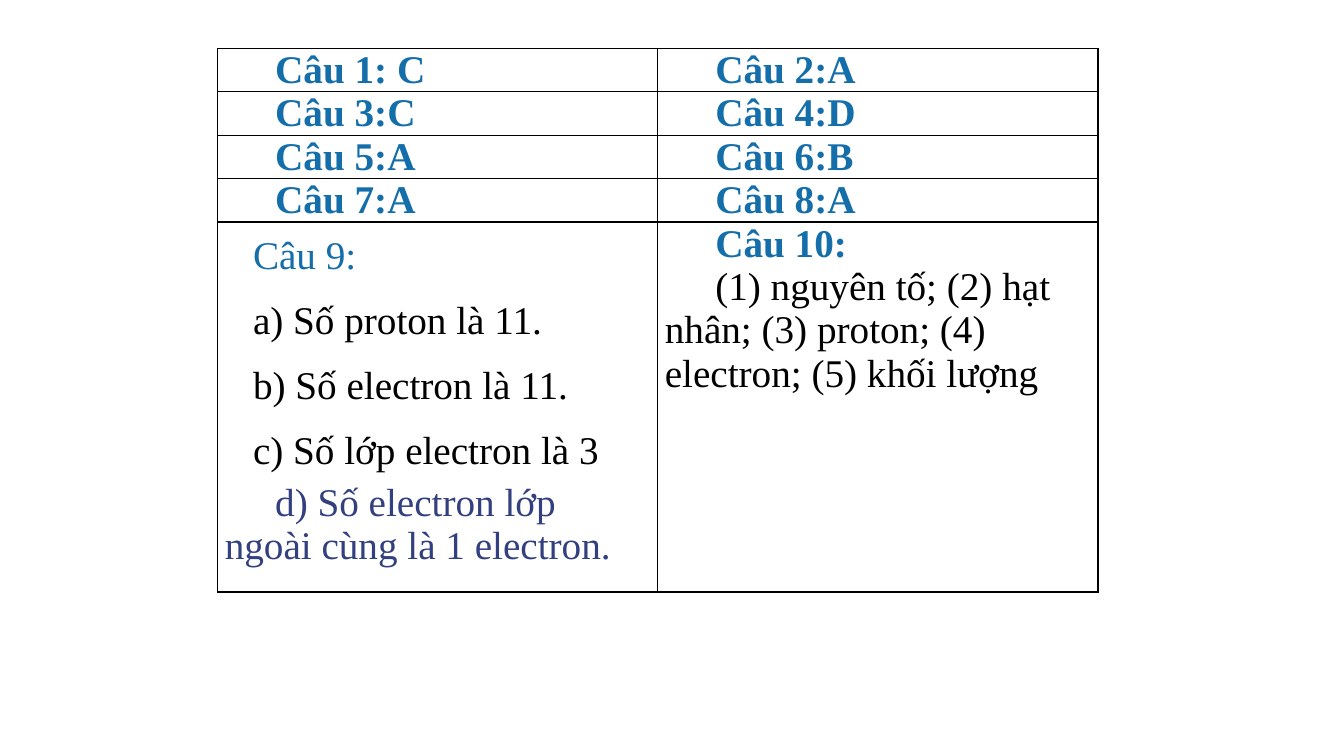
from pptx import Presentation
from pptx.dml.color import RGBColor
from pptx.oxml import parse_xml
from pptx.oxml.ns import nsdecls
from pptx.util import Inches, Pt

# Content
BLUE, BLACK, NAVY = "146EA9", "000000", "33407F"
HEADING = dict(color=BLUE, bold=True)
SPACED = dict(indent=0.28, line_spacing=1.3, space_after=6)

SHORT_ANSWERS = [
    ("Câu 1: C", "Câu 2:A"),
    ("Câu 3:C", "Câu 4:D"),
    ("Câu 5:A", "Câu 6:B"),
    ("Câu 7:A", "Câu 8:A"),
]
LONG_ANSWERS = (
    [
        ("Câu 9:", dict(SPACED, color=BLUE)),
        ("a) Số proton là 11.", SPACED),
        ("b) Số electron là 11.", SPACED),
        ("c) Số lớp electron là 3", SPACED),
        ("d) Số electron lớp ngoài cùng là 1 electron.", dict(color=NAVY)),
    ],
    [
        ("Câu 10:", HEADING),
        ("(1) nguyên tố; (2) hạt nhân; (3) proton; (4) electron; (5) khối lượng", {}),
    ],
)
ROWS = [[[(answer, HEADING)] for answer in pair] for pair in SHORT_ANSWERS]
ROWS.append(LONG_ANSWERS)

# Layout in inches
LEFT, TOP = 2.16, 0.48
COLUMN_WIDTH, SHORT_HEIGHT, LONG_HEIGHT = 4.365, 0.43, 3.67


def rgb(value):
    return RGBColor.from_string(value)


def write(para, text, color=BLACK, bold=False, indent=0.5, line_spacing=None, space_after=0):
    properties = para._p.get_or_add_pPr()
    properties.set("marL", "0")
    properties.set("indent", str(Inches(indent)))
    para.line_spacing = line_spacing
    para.space_after = Pt(space_after)
    span = para.add_run()
    span.text = text
    span.font.name = "Times New Roman"
    span.font.size = Pt(28)
    span.font.bold = bold
    span.font.color.rgb = rgb(color)


def style_cell(cell):
    cell.margin_left = cell.margin_right = Inches(0.07)
    cell.margin_top = cell.margin_bottom = 0
    for side in ("lnL", "lnR", "lnT", "lnB"):
        cell._tc.get_or_add_tcPr().append(parse_xml(
            f'<a:{side} {nsdecls("a")} w="{Pt(1)}"><a:solidFill>'
            f'<a:srgbClr val="{BLACK}"/></a:solidFill></a:{side}>'))
    cell.fill.background()


deck = Presentation()
deck.slide_width, deck.slide_height = Inches(13.33), Inches(7.5)
page = deck.slides.add_slide(deck.slide_layouts[6])

# Answer table
heights = [SHORT_HEIGHT] * len(SHORT_ANSWERS) + [LONG_HEIGHT]
table = page.shapes.add_table(
    len(ROWS), 2, Inches(LEFT), Inches(TOP),
    Inches(2 * COLUMN_WIDTH), Inches(sum(heights))).table
table.first_row = table.horz_banding = False
for column in table.columns:
    column.width = Inches(COLUMN_WIDTH)

for row_index, (row, height) in enumerate(zip(ROWS, heights)):
    table.rows[row_index].height = Inches(height)
    for column_index, lines in enumerate(row):
        cell = table.cell(row_index, column_index)
        style_cell(cell)
        frame = cell.text_frame
        for number, (text, style) in enumerate(lines):
            para = frame.add_paragraph() if number else frame.paragraphs[0]
            write(para, text, **style)

deck.save("out.pptx")
